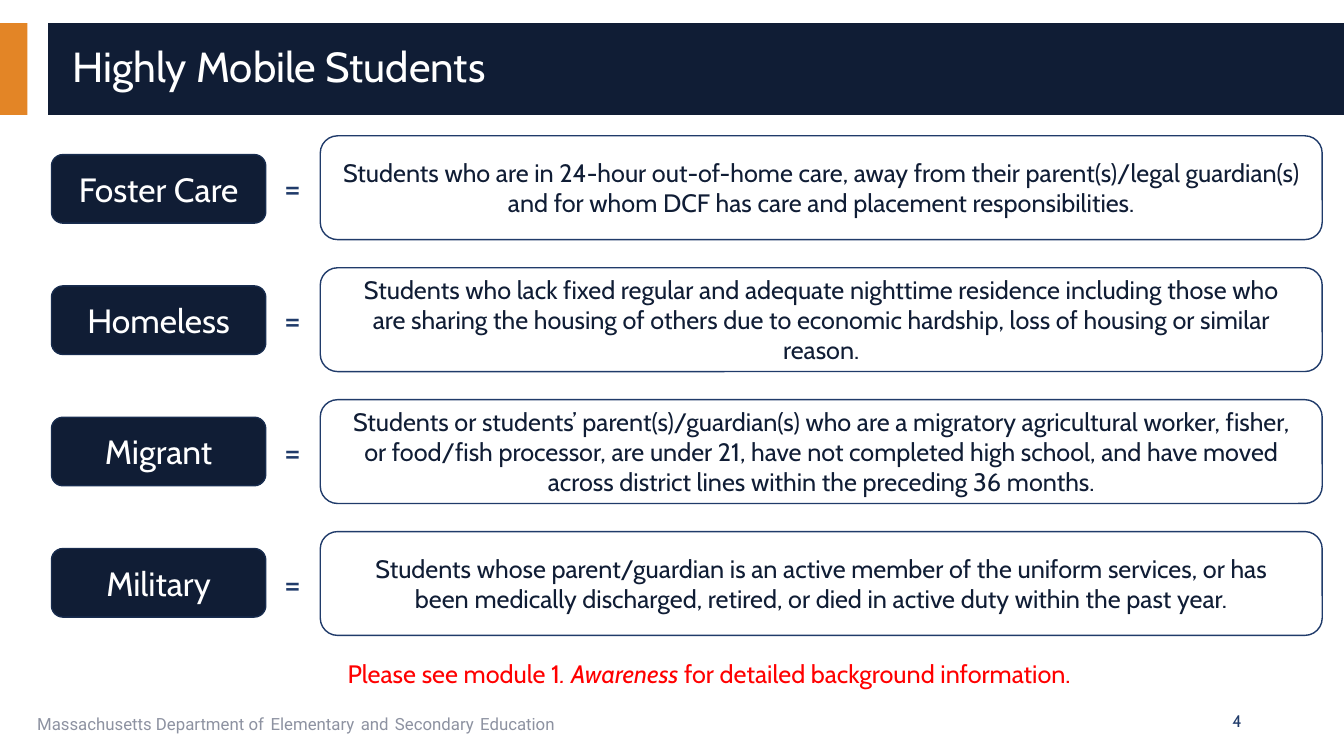
from dataclasses import dataclass

from pptx import Presentation
from pptx.dml.color import RGBColor
from pptx.enum.shapes import MSO_SHAPE
from pptx.enum.text import MSO_ANCHOR, PP_ALIGN
from pptx.shapes.autoshape import Shape
from pptx.slide import Slide
from pptx.text.text import Font
from pptx.util import Inches, Pt

RECTANGLE, ROUNDED = MSO_SHAPE.RECTANGLE, MSO_SHAPE.ROUNDED_RECTANGLE
TOP, MIDDLE = MSO_ANCHOR.TOP, MSO_ANCHOR.MIDDLE
LEFT, CENTER, RIGHT = PP_ALIGN.LEFT, PP_ALIGN.CENTER, PP_ALIGN.RIGHT
SLIDE_WIDTH, SLIDE_HEIGHT = Inches(13.33), Inches(7.5)
NAVY, BLUE, TERM_EDGE = "101D35", "203B6A", "182C4E"
ORANGE, WHITE, RED, GRAY = "E38526", "FFFFFF", "FF0000", "8D92A1"
HARD_SPACE = chr(160)


@dataclass(frozen=True)
class Area:
    """Position and size in percent of the slide."""
    left: float
    top: float
    width: float
    height: float

    def down(self, distance: float) -> "Area":
        return Area(self.left, self.top + distance, self.width, self.height)

    def box(self) -> tuple[int, int, int, int]:
        return (round(SLIDE_WIDTH * self.left / 100), round(SLIDE_HEIGHT * self.top / 100),
                round(SLIDE_WIDTH * self.width / 100), round(SLIDE_HEIGHT * self.height / 100))


@dataclass(frozen=True)
class TextStyle:
    size: float
    color: str
    align: PP_ALIGN = LEFT
    anchor: MSO_ANCHOR = TOP
    face: str = "Cabin"


@dataclass(frozen=True)
class StudentGroup:
    term: str
    definition: str


GROUPS = [
    StudentGroup("Foster Care",
                 "Students who are in 24-hour out-of-home care, away from their parent(s)/legal "
                 f"guardian(s) and{HARD_SPACE}for whom DCF has care and placement "
                 "responsibilities."),
    StudentGroup("Homeless",
                 "Students who lack fixed regular and adequate nighttime residence including those "
                 f"who are{HARD_SPACE}sharing the housing of others due to economic hardship, "
                 "loss of housing or similar reason."),
    StudentGroup("Migrant",
                 "Students or students’ parent(s)/guardian(s) who are a migratory agricultural "
                 f"worker, fisher, or{HARD_SPACE}food/fish processor, are under 21, have not "
                 f"completed high school, and have moved across{HARD_SPACE}district lines within "
                 "the preceding 36 months."),
    StudentGroup("Military",
                 "Students whose parent/guardian is an active member of the uniform services, or "
                 f"has been{HARD_SPACE}medically discharged, retired, or died in active duty "
                 "within the past year."),
]
TERM_AREA, TERM_PITCH = Area(3.83, 20.45, 15.95, 9.07), 17.37
EQUALS_AREA = Area(20.4, 21.4, 3.38, 6.67)
DEFINITION_AREA, DEFINITION_PITCH = Area(23.83, 17.97, 74.55, 13.73), 17.45

TITLE_STYLE = TextStyle(30, WHITE, LEFT, MIDDLE)
TERM_STYLE = TextStyle(24, WHITE, CENTER, MIDDLE)
EQUALS_STYLE = TextStyle(24, BLUE)
DEFINITION_STYLE = TextStyle(18, NAVY, CENTER, MIDDLE)
NOTE_STYLE = TextStyle(18, RED)
FOOTER_STYLE = TextStyle(12, GRAY, face="Roboto")
NUMBER_STYLE = TextStyle(12, BLUE, RIGHT, MIDDLE)


def color(hex_code: str) -> RGBColor:
    return RGBColor.from_string(hex_code)


def format_font(font: Font, style: TextStyle) -> None:
    font.name, font.size = style.face, Pt(style.size)
    font.color.rgb = color(style.color)


def write(holder: Shape, runs: list[str], style: TextStyle) -> None:
    frame = holder.text_frame
    frame.word_wrap = True
    frame.vertical_anchor = style.anchor
    paragraph = frame.paragraphs[0]
    paragraph.alignment = style.align
    format_font(paragraph.font, style)
    for wording in runs:
        paragraph.add_run().text = wording


def add_panel(slide: Slide, outline: MSO_SHAPE, area: Area, fill: str, edge: str = "") -> Shape:
    panel = slide.shapes.add_shape(outline, *area.box())
    panel.shadow.inherit = False
    panel.fill.solid()
    panel.fill.fore_color.rgb = color(fill)
    if edge:
        panel.line.color.rgb = color(edge)
        panel.line.width = Pt(1)
    else:
        panel.line.fill.background()
    return panel


def add_label(slide: Slide, area: Area, runs: list[str], style: TextStyle) -> Shape:
    label = slide.shapes.add_textbox(*area.box())
    write(label, runs, style)
    return label


def add_title(slide: Slide) -> None:
    title = slide.shapes.title
    title.left, title.top, title.width, title.height = Area(4.65, 4.2, 93.3, 9.87).box()
    write(title, ["Highly Mobile Students"], TITLE_STYLE)
    title.text_frame.paragraphs[0].line_spacing = 0.9


def add_footer(slide: Slide) -> None:
    words = ["Massachusetts Department of", " ", "Elementary", " ", "and", " ",
             "Secondary", " ", "Education"]
    footer = add_label(slide, Area(2.03, 92.67, 63.3, 5.33), words, FOOTER_STYLE)
    for gap in footer.text_frame.paragraphs[0].runs[1::2]:
        gap.font.size = Pt(18)
    add_label(slide, Area(70.63, 92.67, 22.5, 5.33), ["4"], NUMBER_STYLE)


def add_group(slide: Slide, row: int, group: StudentGroup) -> None:
    term = add_panel(slide, ROUNDED, TERM_AREA.down(row * TERM_PITCH), NAVY, TERM_EDGE)
    write(term, [group.term], TERM_STYLE)
    add_label(slide, EQUALS_AREA.down(row * DEFINITION_PITCH), ["="], EQUALS_STYLE)
    definition = add_panel(slide, ROUNDED, DEFINITION_AREA.down(row * DEFINITION_PITCH),
                           WHITE, BLUE)
    write(definition, [group.definition], DEFINITION_STYLE)


def add_note(slide: Slide) -> None:
    note = add_label(slide, Area(25.13, 86.4, 61.05, 5.33),
                     ["Please see module 1", ". Awareness ",
                      "for detailed background information."], NOTE_STYLE)
    note.text_frame.paragraphs[0].runs[1].font.italic = True


def main() -> None:
    presentation = Presentation()
    presentation.slide_width, presentation.slide_height = SLIDE_WIDTH, SLIDE_HEIGHT
    slide = presentation.slides.add_slide(presentation.slide_layouts.get_by_name("Title Only"))
    add_panel(slide, RECTANGLE, Area(0, 3.07, 2.05, 12.13), ORANGE)
    banner = add_panel(slide, RECTANGLE, Area(3.58, 3.07, 96.42, 12.13), NAVY)
    slide.shapes.title.element.addprevious(banner.element)
    add_title(slide)
    add_footer(slide)
    for row, group in enumerate(GROUPS):
        add_group(slide, row, group)
    add_note(slide)
    presentation.save("out.pptx")


if __name__ == "__main__":
    main()
